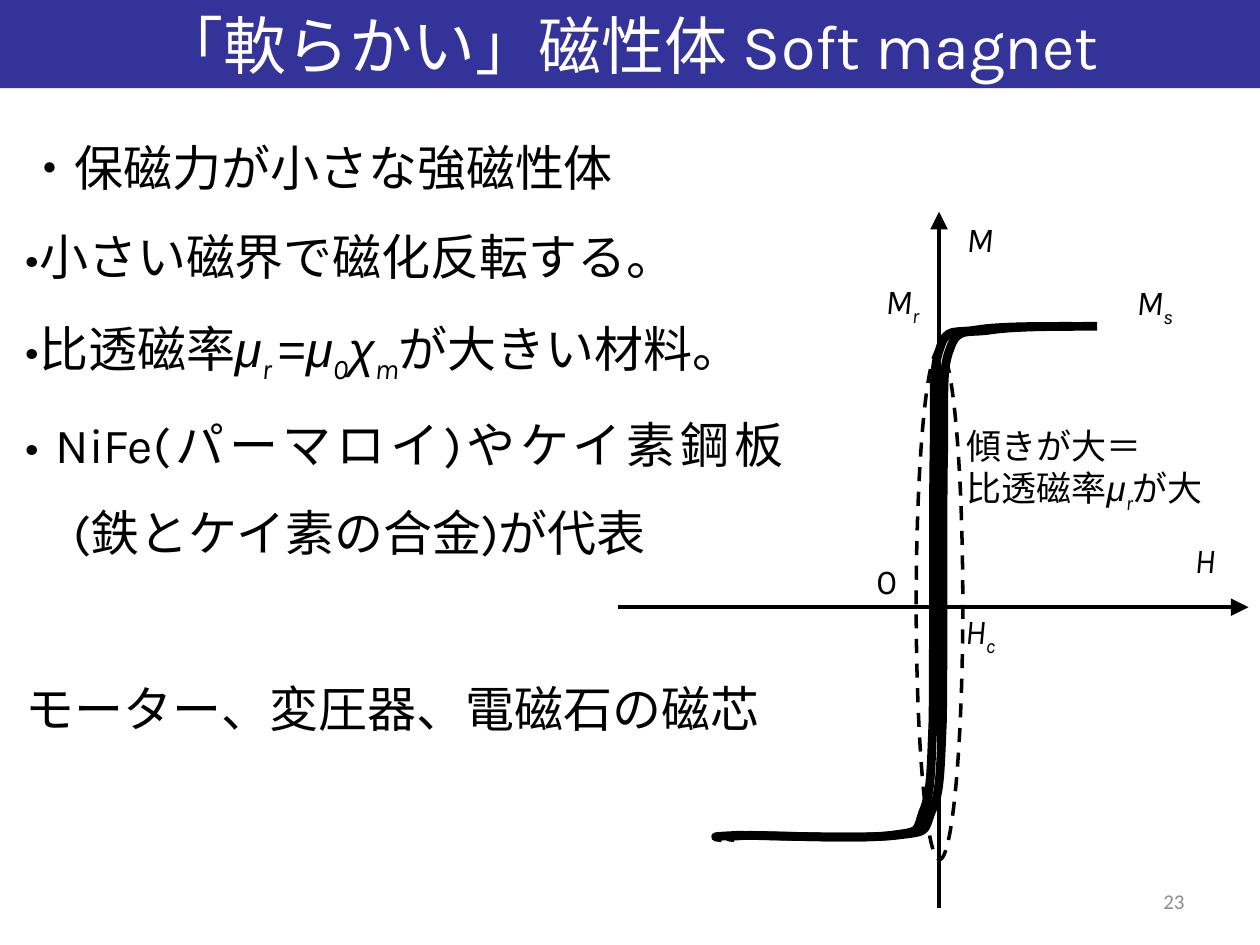
"""Build a slide on soft magnets with a narrow hysteresis loop."""
from lxml import etree
from pptx import Presentation
from pptx import util as u
from pptx.dml.color import RGBColor
from pptx.enum import dml, shapes, text
from pptx.oxml.ns import qn

THEME = {
    "ink": RGBColor(0, 0, 0),
    "band": RGBColor(0x33, 0x33, 0x99),
    "title": {"size": 36, "color": RGBColor(255, 255, 255)},
    "body": {"size": 28, "color": RGBColor(0, 0, 0)},
    "label": {"size": 20, "color": RGBColor(0, 0, 0)},
    "number": {"size": 12, "color": RGBColor(0x8C, 0x8C, 0x8C)},
    "axis": 2,
    "loop": 5,
}
RUN_STYLES = {
    "plain": {"name": "Karla"},
    "cjk": {"name": "Noto Sans CJK JP"},
    "page": {"name": "Calibri"},
    "sign": {"name": "Arial"},
    "var": {"name": "Karla", "italic": True},
    "greek": {"name": "Arial", "italic": True},
    "sub": {"name": "Karla", "italic": True},
}

TITLE = [[("「軟らかい」磁性体 Soft magnet", "plain")]]
BODY = [
    [("・保磁力が小さな強磁性体", "cjk")],
    [("•小さい磁界で磁化反転する。", "plain")],
    [("•比透磁率", "plain"), ("μ", "greek"), ("r ", "sub"), ("=", "sign"),
     ("μ", "greek"), ("0", "sub"), ("χ", "greek"), ("m", "sub"),
     ("が大きい材料。", "plain")],
    [("• NiFe(パーマロイ)やケイ素鋼板(鉄とケイ素の合金)が代表", "plain")],
    [("モーター、変圧器、電磁石の磁芯", "plain")],
]
SLOPE_NOTE = [
    [("傾きが大＝", "plain")],
    [("比透磁率", "plain"), ("μ", "greek"), ("r", "sub"), ("が大", "plain")],
]
LABELS = [
    ((17.42, 11.15, 0.89, 1.09), [("0", "plain")]),
    ((23.83, 10.74, 0.99, 1.09), [("H", "var")]),
    ((19.23, 4.27, 1.04, 1.09), [("M", "var")]),
    ((17.6, 5.51, 1.22, 1.12), [("M", "var"), ("r", "sub")]),
    ((19.2, 12.17, 1.22, 1.12), [("H", "var"), ("c", "sub")]),
    ((22.66, 5.54, 1.27, 1.12), [("M", "var"), ("s", "sub")]),
]
AXES = {"M": (18.93, 18.31, 18.93, 4.27), "H": (12.45, 12.24, 25.17, 12.24)}
SLOPE_RING = (18.47, 7.04, 0.94, 10.29)
LOOP_START = (14.55, 16.89)
LOOP_CURVES = [
    ((14.4, 16.87), (14.27, 16.87), (14.86, 16.84)),
    ((15.44, 16.84), (17.4, 16.92), (18.06, 16.84)),
    ((18.72, 16.76), (18.62, 16.79), (18.77, 16.38)),
    ((18.95, 16), (18.95, 15.7), (19, 14.53)),
    ((19.02, 13.34), (19, 10.57), (19.02, 9.32)),
    ((19.05, 8.08), (18.97, 7.47), (19.15, 7.04)),
    ((19.3, 6.58), (19.48, 6.73), (19.99, 6.65)),
    ((20.47, 6.58), (21.29, 6.58), (22.12, 6.58)),
]
LOOP_LEFT = 14.27
BRANCHES = [(14.27, 1), (14.55, 0.9)]


def cm(values):
    return [u.Cm(v) for v in values]


def apply(obj, values):
    for name, value in values.items():
        setattr(obj, name, value)


def add_run(p, words, style, look):
    r = p.add_run()
    r.text = words
    r.font.size = u.Pt(look["size"])
    r.font.color.rgb = look["color"]
    apply(r.font, RUN_STYLES[style])
    rpr = r._r.get_or_add_rPr()
    etree.SubElement(rpr, qn("a:ea")).set("typeface", RUN_STYLES[style]["name"])
    if style == "sub":
        rpr.set("baseline", "-25000")


def fill_text(sp, paragraphs, look, para=None, **frame):
    tf = sp.text_frame
    apply(tf, {"word_wrap": True,
               "auto_size": text.MSO_AUTO_SIZE.SHAPE_TO_FIT_TEXT, **frame})
    for i, runs in enumerate(paragraphs):
        p = tf.add_paragraph() if i else tf.paragraphs[0]
        apply(p, para or {})
        for words, style in runs:
            add_run(p, words, style, look)
    return tf


def set_line(sp, width):
    sp.line.color.rgb = THEME["ink"]
    sp.line.width = u.Pt(width)


def add_axis(s, ends):
    sp = s.shapes.add_connector(shapes.MSO_CONNECTOR.STRAIGHT, *cm(ends))
    set_line(sp, THEME["axis"])
    head = etree.SubElement(sp.line._get_or_add_ln(), qn("a:tailEnd"))
    for name, value in {"type": "triangle", "w": "lg", "len": "lg"}.items():
        head.set(name, value)
    etree.SubElement(sp._element.spPr, qn("a:effectLst"))


def bend(sp):
    outline = next(sp._element.iter(qn("a:path")))
    legs = outline.findall(qn("a:lnTo"))
    for i in range(0, len(legs), 3):
        curve = etree.SubElement(outline, qn("a:cubicBezTo"))
        for leg in legs[i:i + 3]:
            curve.append(leg[0])
            outline.remove(leg)


def add_branch(s, left, scale):
    corners = [LOOP_START, *(pt for curve in LOOP_CURVES for pt in curve)]
    points = [cm((left + (x - LOOP_LEFT) * scale, y)) for x, y in corners]
    builder = s.shapes.build_freeform(*points[0])
    builder.add_line_segments(points[1:], close=False)
    sp = builder.convert_to_shape()
    bend(sp)
    sp.shadow.inherit = False
    sp.fill.background()
    set_line(sp, THEME["loop"])


def main():
    prs = Presentation()
    prs.slide_width, prs.slide_height = cm((25.4, 19.05))
    s = prs.slides.add_slide(prs.slide_layouts[6])

    sp = s.shapes.add_textbox(*cm((18.21, 17.65, 5.92, 1.02)))
    fill_text(sp, [[("23", "page")]], THEME["number"],
              {"alignment": text.PP_ALIGN.RIGHT},
              auto_size=text.MSO_AUTO_SIZE.NONE,
              vertical_anchor=text.MSO_ANCHOR.MIDDLE)

    sp = s.shapes.add_shape(shapes.MSO_SHAPE.RECTANGLE, *cm((0, 0, 25.4, 1.78)))
    sp.shadow.inherit = False
    sp.fill.solid()
    sp.fill.fore_color.rgb = THEME["band"]
    sp.line.fill.background()
    fill_text(sp, TITLE, THEME["title"], {"alignment": text.PP_ALIGN.CENTER},
              vertical_anchor=text.MSO_ANCHOR.MIDDLE)

    sp = s.shapes.add_textbox(*cm((0.27, 2.06, 15.77, 12.83)))
    tf = fill_text(sp, BODY, THEME["body"],
                   {"alignment": text.PP_ALIGN.JUSTIFY, "line_spacing": 1.5})
    for p in tf.paragraphs:
        ppr = p._p.get_or_add_pPr()
        ppr.set("marL", str(u.Cm(0.96)))
        ppr.set("indent", str(-u.Cm(0.96)))
    tf.paragraphs[-1].space_before = u.Pt(50)

    add_axis(s, AXES["M"])
    for left, scale in BRANCHES:
        add_branch(s, left, scale)

    sp = s.shapes.add_textbox(*cm((19.23, 8.43, 6.25, 1.96)))
    fill_text(sp, SLOPE_NOTE, THEME["label"])

    sp = s.shapes.add_shape(shapes.MSO_SHAPE.OVAL, *cm(SLOPE_RING))
    sp.shadow.inherit = False
    sp.fill.background()
    set_line(sp, THEME["axis"])
    sp.line.dash_style = dml.MSO_LINE.DASH

    for box, runs in LABELS:
        sp = s.shapes.add_textbox(*cm(box))
        fill_text(sp, [runs], THEME["label"], word_wrap=False)
    add_axis(s, AXES["H"])
    prs.save("out.pptx")


if __name__ == "__main__":
    main()
